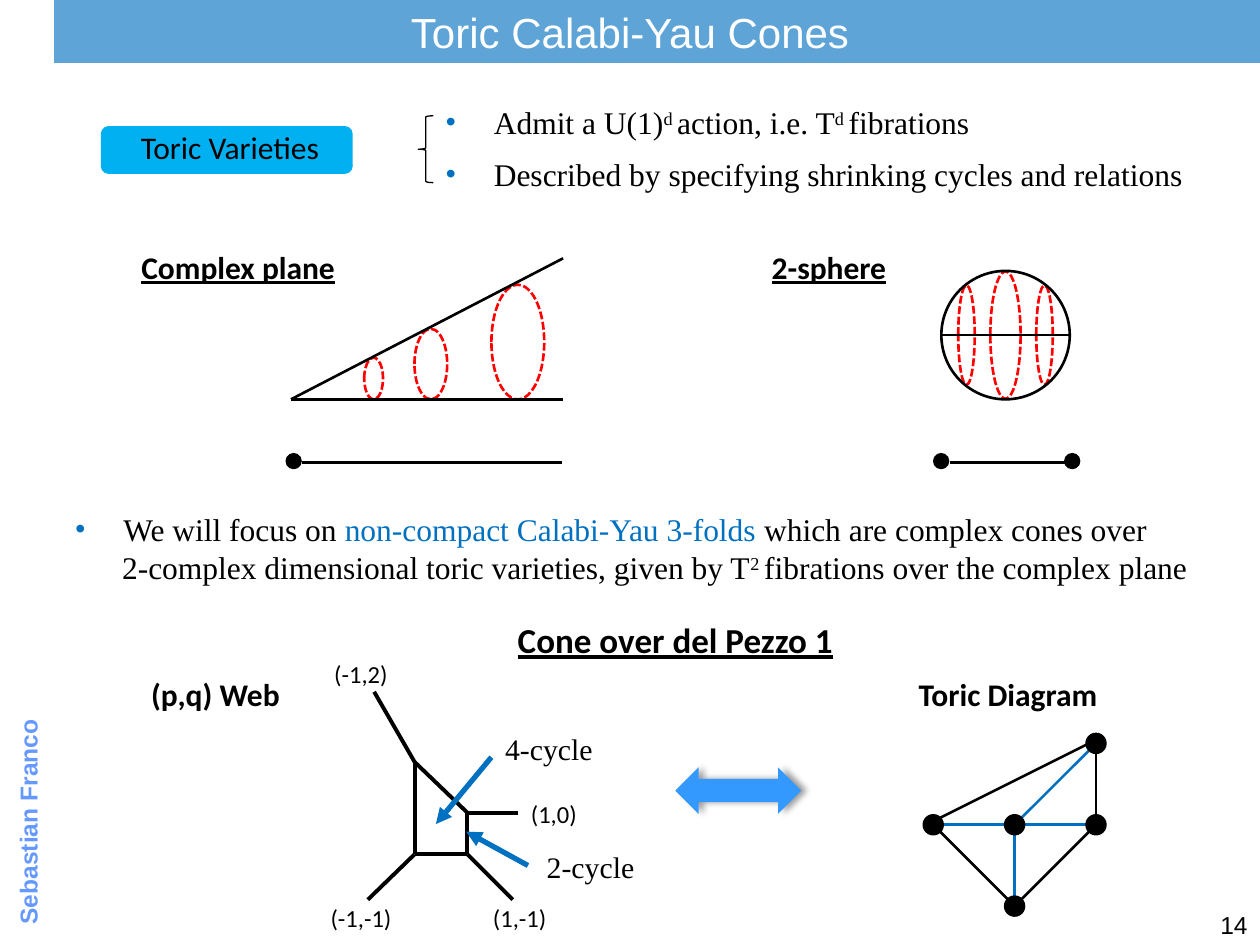
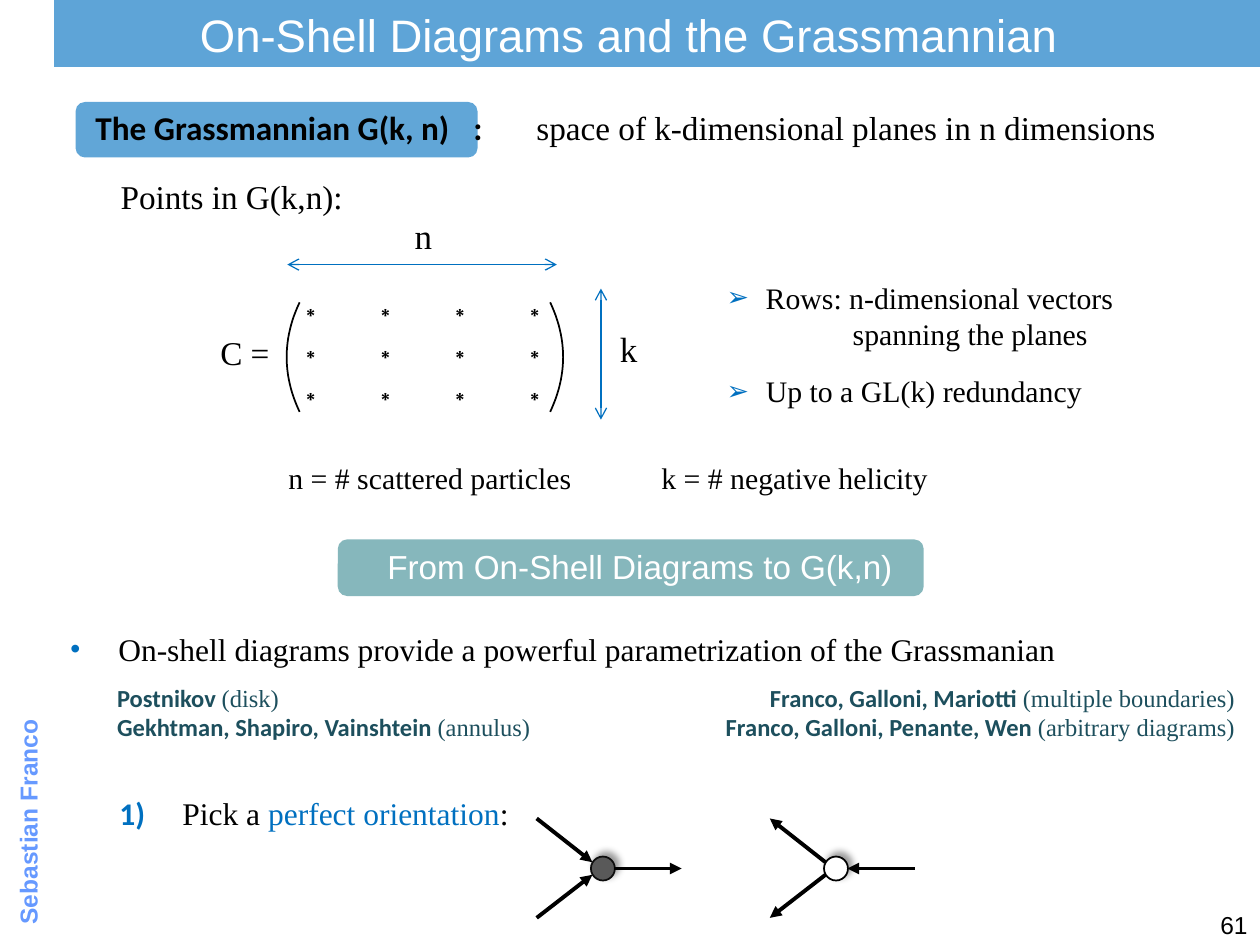
from dataclasses import dataclass, replace
from math import hypot
from typing import NamedTuple, Optional

from lxml.etree import SubElement
from pptx import Presentation
from pptx.dml.color import RGBColor
from pptx.enum.dml import MSO_LINE
from pptx.enum.shapes import MSO_CONNECTOR, MSO_SHAPE
from pptx.enum.text import MSO_ANCHOR, MSO_AUTO_SIZE, PP_ALIGN
from pptx.oxml.ns import qn
from pptx.util import Pt


@dataclass(frozen=True)
class Theme:
    sans: str = "Arial"
    head: str = "Calibri"
    serif: str = "Times New Roman"
    black: str = "000000"
    white: str = "FFFFFF"
    blue: str = "0070C0"
    cyan: str = "00B0F0"
    arrow: str = "3399FF"
    author: str = "6699FF"
    red: str = "FF0000"
    teal: str = "3C8C93"
    citation: str = "1D4F5D"
    grey: str = "595959"
    small: int = 14
    star: int = 15
    note: int = 17
    body: int = 18
    large: int = 19
    topic: int = 20


THEME = Theme()
LEFT, CENTER, RIGHT = PP_ALIGN.LEFT, PP_ALIGN.CENTER, PP_ALIGN.RIGHT


class Area(NamedTuple):
    x: float
    y: float
    w: float
    h: float


class Point(NamedTuple):
    x: float
    y: float

    def shift(self, dx: float, dy: float) -> "Point":
        return Point(self.x + dx, self.y + dy)


@dataclass(frozen=True)
class Span:
    text: str
    size: float = THEME.body
    font: str = THEME.serif
    color: str = THEME.black
    bold: bool = False
    underline: bool = False
    raised: bool = False


@dataclass(frozen=True)
class Para:
    spans: tuple[Span, ...]
    align: PP_ALIGN = LEFT
    margin: float = 0
    indent: float = 0
    bullet: str = ""
    tabs: tuple[float, ...] = ()


@dataclass(frozen=True)
class Look:
    fill: Optional[str] = None
    line: Optional[str] = None
    width: float = 0.75
    alpha: int = 100
    dashed: bool = False
    shadow: Optional[int] = None  # direction in degrees


DOT = Look(fill=THEME.black, line=THEME.black)
CYCLE = Look(line=THEME.red, width=1.5, dashed=True)


def set_values(target, values: dict) -> None:
    for name, value in values.items():
        setattr(target, name, value)


# Text
def one(text: str, align: PP_ALIGN = LEFT, **style) -> Para:
    return Para((Span(text, **style),), align)


def bulleted(*spans: Span, mark: str = "•", hang: float = 27.4) -> Para:
    return Para(spans, LEFT, hang, -hang, mark)


def write_para(para, content: Para) -> None:
    para.alignment = content.align
    props = para._p.get_or_add_pPr()
    props.set("marL", str(Pt(content.margin)))
    props.set("indent", str(Pt(content.indent)))
    if content.bullet:
        SubElement(SubElement(props, qn("a:buClr")), qn("a:srgbClr"), val=THEME.blue)
        SubElement(props, qn("a:buSzPct"), val="90000")
        SubElement(props, qn("a:buFont"), typeface=THEME.sans)
        SubElement(props, qn("a:buChar"), char=content.bullet)
    if content.tabs:
        stops = SubElement(props, qn("a:tabLst"))
        for stop in content.tabs:
            SubElement(stops, qn("a:tab"), pos=str(Pt(stop)), algn="l")
    for item in content.spans:
        span = para.add_run()
        span.text = item.text
        set_values(span.font, {"name": item.font, "size": Pt(item.size),
                               "bold": item.bold, "underline": item.underline})
        span.font.color.rgb = RGBColor.from_string(item.color)
        if item.raised:
            span._r.get_or_add_rPr().set("baseline", "30000")


def write_label(page, area: Area, *paras: Para, turn: float = 0) -> None:
    box = page.shapes.add_textbox(*map(Pt, area))
    box.rotation = turn
    box.text_frame.word_wrap = True
    for index, content in enumerate(paras):
        frame = box.text_frame
        write_para(frame.add_paragraph() if index else frame.paragraphs[0], content)


# Shapes and lines
def style_line(line, color: str, width: float) -> None:
    line.color.rgb = RGBColor.from_string(color)
    line.width = Pt(width)


def style_shape(shape, look: Look) -> None:
    shape.shadow.inherit = False
    props = shape.element.spPr
    if look.fill:
        shape.fill.solid()
        shape.fill.fore_color.rgb = RGBColor.from_string(look.fill)
        if look.alpha < 100:
            SubElement(props.find(qn("a:solidFill"))[0], qn("a:alpha"), val=str(look.alpha * 1000))
    else:
        shape.fill.background()
    if look.line:
        style_line(shape.line, look.line, look.width)
        if look.dashed:
            shape.line.dash_style = MSO_LINE.SQUARE_DOT
    else:
        shape.line.fill.background()
    if look.shadow is not None:
        cast = SubElement(props.find(qn("a:effectLst")), qn("a:outerShdw"), blurRad=str(Pt(4)),
                          dist=str(Pt(3)), dir=str(look.shadow * 60000), rotWithShape="0")
        tint = SubElement(cast, qn("a:srgbClr"), val=THEME.black)
        SubElement(tint, qn("a:alpha"), val="40000")


def draw_shape(page, kind: MSO_SHAPE, area: Area, look: Look):
    shape = page.shapes.add_shape(kind, *map(Pt, area))
    style_shape(shape, look)
    return shape


def draw_oval(page, center: Point, w: float, h: float, look: Look) -> None:
    draw_shape(page, MSO_SHAPE.OVAL, Area(center.x - w / 2, center.y - h / 2, w, h), look)


def draw_line(page, start: Point, end: Point, color: str = THEME.black,
              width: float = 1.5, head: str = "", tail: str = "") -> None:
    line = page.shapes.add_connector(MSO_CONNECTOR.STRAIGHT, *map(Pt, (*start, *end)))
    style_line(line.line, color, width)
    outline = line.line._get_or_add_ln()
    for tag, kind in (("a:headEnd", head), ("a:tailEnd", tail)):
        if kind:
            SubElement(outline, qn(tag), type=kind)
    SubElement(line.element.spPr, qn("a:effectLst"))


# Title, band, author and page number
def start_page(deck, title: str, area: Area, size: float, number: int):
    page = deck.slides.add_slide(deck.slide_layouts[5])
    heading = page.shapes.title
    set_values(heading, dict(zip(("left", "top", "width", "height"), map(Pt, area))))
    set_values(heading.text_frame, {"word_wrap": True, "auto_size": MSO_AUTO_SIZE.NONE,
                                    "vertical_anchor": MSO_ANCHOR.MIDDLE})
    write_para(heading.text_frame.paragraphs[0],
               one(title, CENTER, size=size, font=THEME.sans, color=THEME.white))
    band = draw_shape(page, MSO_SHAPE.RECTANGLE, Area(31, 0, 689, 36 if size < 26 else 38.2),
                      Look(THEME.blue, alpha=63))
    heading.element.addprevious(band.element)
    plain = {"size": THEME.small, "font": THEME.sans}
    write_label(page, Area(-92.2, 403.2, 228.2, 36),
                one("Sebastian Franco", color=THEME.author, bold=True, **plain), turn=270)
    write_label(page, Area(684, 516.2, 36, 24), one(str(number), RIGHT, **plain))
    return page


# Toric cones: the parts of the first slide
def draw_fibrations(page) -> None:
    base, tip, far = 228.2, 166.3, 321.8
    for x, w, h in ((213.5, 10.8, 23.8), (246.2, 18.7, 40.3), (295.9, 30.2, 65.5)):
        draw_oval(page, Point(x, base - h / 2), w, h, CYCLE)
    for y in (base, 147.6):
        draw_line(page, Point(tip, base), Point(far, y))
    center = Point(574.6, 191.5)
    for dx, w, h in ((0, 17.3, 72.7), (-22.3, 9.4, 56.9), (22.3, 9.4, 56.9)):
        draw_oval(page, center.shift(dx, 0), w, h, CYCLE)
    draw_oval(page, center, 73.4, 73.4, Look(line=THEME.black, width=1.5))
    draw_line(page, center.shift(-36.7, 0), center.shift(36.7, 0))
    # Base segments
    for start, end in ((172.8, 321.1), (542.9, 612)):
        draw_line(page, Point(start, 264.2), Point(end, 264.2))
    for x in (167.8, 537.8, 612.7):
        draw_oval(page, Point(x, 263.5), 8.6, 8.6, DOT)


def draw_web(page) -> None:
    top, low_left = Point(236.9, 435.4), Point(236.9, 488.2)
    low_right, right = Point(267.1, 488.2), Point(267.1, 464.4)
    edges = ((top, low_left), (low_left, low_right), (low_right, right), (right, top),
             (top, Point(213.8, 395.3)), (right, Point(295.9, 464.4)),
             (low_right, Point(293, 514.1)), (low_left, Point(210.2, 514.1)))
    for start, end in edges:
        draw_line(page, start, end, width=2.25)
    for text, x, y in (("(1,0)", 286.6, 452.9), ("(1,-1)", 267.1, 512.6),
                       ("(-1,-1)", 176.4, 512.6), ("(-1,2)", 176.4, 373)):
        write_label(page, Area(x, y, 59.8, 24.5),
                    one(text, CENTER, size=THEME.small, font=THEME.head))
    for text, x, y, start, end in (
            ("2-cycle", 305.3, 481.7, Point(301.7, 494.6), Point(266.4, 475.2)),
            ("4-cycle", 281.5, 414, Point(280.8, 432.7), Point(249.1, 470.9))):
        draw_line(page, start, end, THEME.blue, 3, tail="triangle")
        write_label(page, Area(x, y, 77.8, 36), one(text, size=THEME.note))


def draw_toric_diagram(page) -> None:
    step, radius, middle = 46.5, 5.75, Point(579.8, 471.3)
    left, right, bottom, top = (middle.shift(i * step, j * step)
                                for i, j in ((-1, 0), (1, 0), (0, 1), (1, -1)))
    blue, black = THEME.blue, THEME.black
    for start, end, color in ((left, right, blue), (bottom, middle, blue), (top, middle, blue),
                              (left, bottom, black), (top, right, black), (bottom, right, black)):
        dx, dy = end.x - start.x, end.y - start.y
        trim = radius / hypot(dx, dy)
        draw_line(page, start.shift(dx * trim, dy * trim),
                  end.shift(-dx * trim, -dy * trim), color)
    draw_line(page, left.shift(4, -4), top.shift(4, -4))
    for node in (left, middle, right, bottom, top):
        draw_oval(page, node, 2 * radius, 2 * radius, DOT)


def build_cones(deck) -> None:
    page = start_page(deck, "Toric Calabi-Yau Cones", Area(94.3, 0, 531.4, 36), 24, 14)
    draw_shape(page, MSO_SHAPE.ROUNDED_RECTANGLE, Area(57.6, 72, 144, 27.4), Look(THEME.cyan))
    write_label(page, Area(43.2, 69.8, 176.4, 48.2),
                one("Toric Varieties", CENTER, font=THEME.head))
    action = bulleted(Span("Admit a U(1)"), Span("d ", raised=True),
                      Span("action, i.e. T"), Span("d ", raised=True), Span("fibrations"))
    cycles = bulleted(Span("Described by specifying shrinking cycles and relations"))
    for y, para in ((55.4, action), (85, cycles)):
        write_label(page, Area(247.7, y, 462.2, 36), para)
    draw_shape(page, MSO_SHAPE.LEFT_BRACE, Area(239, 66.2, 8.6, 38.2), Look(line=THEME.black))
    write_label(page, Area(36, 288, 684, 36),
                bulleted(Span("We will focus on "),
                         Span("non-compact Calabi-Yau 3-folds ", color=THEME.blue),
                         Span("which are complex cones over")),
                Para((Span("2-complex dimensional toric varieties, given by T"),
                      Span("2 ", raised=True), Span("fibrations over the complex plane")),
                     margin=27.4, indent=-0.7))
    # Headings
    for text, x, y, w, size, underline in (
            ("Complex plane", 49, 138.2, 174.2, THEME.body, True),
            ("2-sphere", 386.6, 138.2, 174.2, THEME.body, True),
            ("(p,q) Web", 36, 382.3, 174.2, THEME.body, False),
            ("Toric Diagram", 488.9, 382.3, 174.2, THEME.body, False),
            ("Cone over del Pezzo 1", 281.5, 349.9, 208.8, THEME.topic, True)):
        write_label(page, Area(x, y, w, 36), one(text, CENTER, size=size, font=THEME.head,
                                                 bold=True, underline=underline))
    draw_fibrations(page)
    draw_web(page)
    draw_shape(page, MSO_SHAPE.LEFT_RIGHT_ARROW, Area(385.9, 438.5, 72, 26.6),
               Look(THEME.arrow, shadow=0))
    draw_toric_diagram(page)


# Grassmannian: the parts of the second slide
def draw_matrix(page) -> None:
    rows, columns = 3, 4
    table = page.shapes.add_table(rows, columns, *map(Pt, (158.4, 166.3, 170.6, 72))).table
    set_values(table, {"first_row": False, "horz_banding": False})
    for cell in table.iter_cells():
        cell.fill.background()
        set_values(cell, {"margin_left": Pt(5.8), "margin_right": Pt(5.8),
                          "margin_top": Pt(2.9), "margin_bottom": Pt(2.9)})
        write_para(cell.text_frame.paragraphs[0],
                   one("∗ ", CENTER, size=THEME.star, font=THEME.sans))
    # Parentheses
    steps = [step / 12 for step in range(-12, 13)]
    for spine, bend in ((163.8, 7.4), (321.8, -7.4)):
        curve = [(Pt(spine + bend * t * t), Pt(204.1 + 31.3 * t)) for t in steps]
        outline = page.shapes.build_freeform(*curve[0])
        outline.add_line_segments(curve[1:], close=False)
        style_shape(outline.convert_to_shape(), Look(line=THEME.black, width=1))
    # Dimensions
    for start, end in ((Point(164.2, 151.2), Point(318.2, 151.2)),
                       (Point(343.4, 164.9), Point(343.4, 239.8))):
        draw_line(page, start, end, THEME.blue, 0.75, "arrow", "arrow")
    for text, x, y in (("n", 203.8, 118.8), ("k", 321.1, 183.6)):
        write_label(page, Area(x, y, 76.3, 37.4), one(text, CENTER, size=THEME.topic))
    write_label(page, Area(118.8, 186.5, 61.9, 37.4), one("C =", size=THEME.large))


def draw_orientations(page) -> None:
    dark = Look(THEME.grey, "0D0D0D", 1, shadow=315)
    light = replace(dark, fill=THEME.white, line=THEME.black)
    for x, look, arrow in ((344.5, dark, "tail"), (477.7, light, "head")):
        center = Point(x, 496.3)
        draw_oval(page, center, 13.7, 13.7, look)
        for start, end in (((6.5, 0), (45, 0)), ((-37.8, -28.6), (-6, -3.6)),
                           ((-37.8, 28.2), (-6, 3.6))):
            draw_line(page, center.shift(*start), center.shift(*end),
                      width=2.25, **{arrow: "triangle"})


def cite(names: str, topic: str, align: PP_ALIGN) -> Para:
    style = {"size": THEME.small, "color": THEME.citation}
    return Para((Span(names, font=THEME.head, bold=True, **style), Span(topic, **style)), align)


def build_grassmannian(deck) -> None:
    page = start_page(deck, "On-Shell Diagrams and the Grassmannian",
                      Area(102.2, 0, 514.8, 38.9), 26, 61)
    draw_shape(page, MSO_SHAPE.ROUNDED_RECTANGLE, Area(43.2, 58.3, 229.7, 31.7),
               Look(THEME.blue, alpha=62))
    write_label(page, Area(47.5, 57.6, 660.2, 30.2),
                Para((Span("The Grassmannian G(k, n)\t:\t", THEME.large, THEME.head, bold=True),
                      Span("space of k-dimensional planes in n dimensions", THEME.large)),
                     tabs=(223.5, 237.2)))
    write_label(page, Area(35.3, 97.2, 660.2, 30.2),
                Para((Span("Points in G(k,n):", THEME.large),), indent=26.6))
    draw_matrix(page)
    rows, redundancy = (bulleted(Span(text, THEME.note), mark="➢", hang=22.3)
                        for text in ("Rows: n-dimensional vectors", "Up to a GL(k) redundancy"))
    planes = Para((Span("spanning the planes", THEME.note),), margin=67, indent=5)
    write_label(page, Area(408.2, 156.2, 254.9, 30.2), rows, planes)
    write_label(page, Area(408.2, 209.5, 291.6, 30.2), redundancy)
    for x, text in ((157.7, "n = # scattered particles"), (370.8, "k = # negative helicity")):
        write_label(page, Area(x, 259.2, 192.2, 30.2), one(text, size=THEME.note))
    # Parametrization
    draw_shape(page, MSO_SHAPE.ROUNDED_RECTANGLE, Area(193, 308.2, 334.8, 32.4),
               Look(THEME.teal, alpha=62))
    write_label(page, Area(62.6, 308.9, 606.2, 30.2),
                one("From On-Shell Diagrams to G(k,n)", CENTER, size=THEME.large,
                    font=THEME.sans, color=THEME.white))
    write_label(page, Area(33.1, 356.4, 697, 46.8), bulleted(
        Span("On-shell diagrams provide a powerful parametrization of the Grassmanian")))
    for x, align, works in (
            (59.8, LEFT, (("Postnikov ", "(disk)"),
                          ("Gekhtman, Shapiro, Vainshtein ", "(annulus)"))),
            (392.4, RIGHT, (("Franco, Galloni, Mariotti ", "(multiple boundaries)"),
                            ("Franco, Galloni, Penante, Wen ", "(arbitrary diagrams)")))):
        write_label(page, Area(x, 386.6, 320.4, 30.2), *(cite(*work, align) for work in works))
    write_label(page, Area(61.2, 450, 660.2, 36),
                Para((Span("1)\t", font=THEME.head, color=THEME.blue, bold=True), Span("Pick a "),
                      Span("perfect orientation", color=THEME.blue), Span(":")), tabs=(24,)))
    draw_orientations(page)


def main() -> None:
    deck = Presentation()
    set_values(deck, {"slide_width": Pt(720), "slide_height": Pt(540)})
    build_cones(deck)
    build_grassmannian(deck)
    deck.save("out.pptx")


if __name__ == "__main__":
    main()
